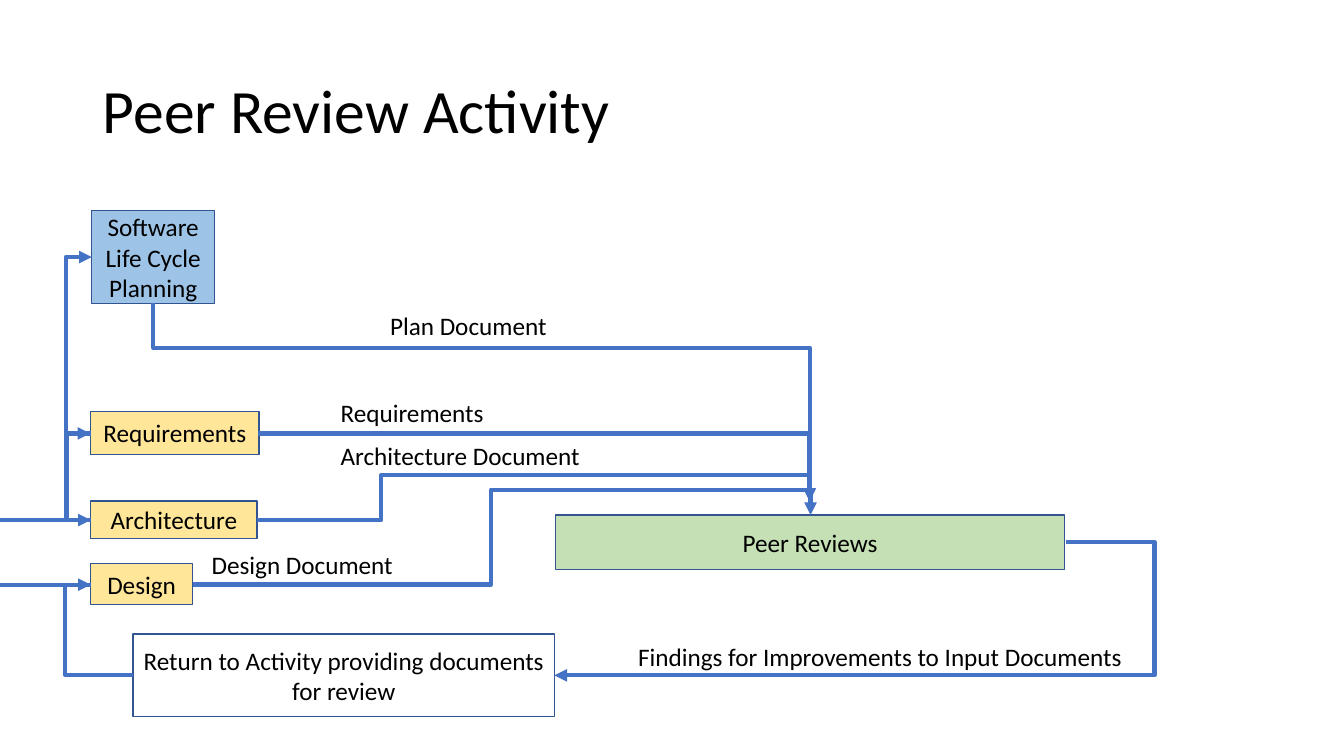
from dataclasses import dataclass

from lxml.etree import SubElement
from pptx import Presentation
from pptx.dml.color import RGBColor
from pptx.enum.shapes import MSO_CONNECTOR, MSO_SHAPE
from pptx.enum.text import MSO_ANCHOR, MSO_AUTO_SIZE, PP_ALIGN
from pptx.oxml.ns import qn
from pptx.util import Inches, Pt


@dataclass(frozen=True)
class Theme:
    font: str = "Calibri"
    title_size: int = 44
    body_size: int = 18
    text: str = "000000"
    outline: str = "325491"
    arrow: str = "4472C4"
    plan: str = "9DC3E6"
    source: str = "FFE699"
    review: str = "C5E0B4"


theme = Theme()


def write_text(shape, text, size, align, frame_format):
    frame = shape.text_frame
    for name, value in frame_format.items():
        setattr(frame, name, value)
    para = frame.paragraphs[0]
    para.alignment = align
    span = para.add_run()
    span.text = text
    font_format = {"name": theme.font, "size": Pt(size)}
    for name, value in font_format.items():
        setattr(span.font, name, value)
    span.font.color.rgb = RGBColor.from_string(theme.text)
    return para


def add_line(kind, start, end, arrow=True):
    points = [Inches(value) for value in (*start, *end)]
    line = page.shapes.add_connector(kind, *points)
    line.line.color.rgb = RGBColor.from_string(theme.arrow)
    line.line.width = Pt(3)
    if arrow:
        SubElement(line.line._get_or_add_ln(), qn("a:tailEnd"), type="triangle")
    SubElement(line._element.spPr, qn("a:effectLst"))
    return line


deck = Presentation()
deck.slide_width, deck.slide_height = Inches(13.33), Inches(7.5)
page = deck.slides.add_slide(deck.slide_layouts[5])

# Title
title = page.shapes.title
title_place = {"left": 0.92, "top": 0.4, "width": 11.5, "height": 1.45}
for name, value in title_place.items():
    setattr(title, name, Inches(value))
title_para = write_text(title, "Peer Review Activity", theme.title_size, PP_ALIGN.LEFT,
                        {"vertical_anchor": MSO_ANCHOR.MIDDLE, "word_wrap": True})
title_para.line_spacing = 0.9

# Activity boxes: text, left, top, width, height, fill
activities = {
    "planning": ("Software Life Cycle Planning", 0.91, 2.09, 1.22, 0.92, theme.plan),
    "requirements": ("Requirements", 0.9, 4.08, 1.67, 0.43, theme.source),
    "architecture": ("Architecture", 0.9, 4.97, 1.65, 0.37, theme.source),
    "design": ("Design", 0.9, 5.59, 1.01, 0.41, theme.source),
    "return": ("Return to Activity providing documents for review",
               1.32, 6.29, 4.18, 0.82, None),
    "reviews": ("Peer Reviews", 5.51, 5.11, 5.05, 0.54, theme.review),
}
boxes = {}
for key, (text, *place, fill) in activities.items():
    box = page.shapes.add_shape(MSO_SHAPE.FLOWCHART_PROCESS, *map(Inches, place))
    box.shadow.inherit = False
    if fill:
        box.fill.solid()
        box.fill.fore_color.rgb = RGBColor.from_string(fill)
    else:
        box.fill.background()
    box.line.color.rgb = RGBColor.from_string(theme.outline)
    box.line.width = Pt(1)
    write_text(box, text, theme.body_size, PP_ALIGN.CENTER,
               {"vertical_anchor": MSO_ANCHOR.MIDDLE, "word_wrap": True})
    boxes[key] = box

# Document labels: text, left, top, width
labels = [
    ("Plan Document", 3.77, 3.03, 2.26),
    ("Requirements", 3.28, 3.89, 1.9),
    ("Architecture Document", 3.28, 4.32, 2.6),
    ("Design Document", 2, 5.4, 2.6),
    ("Findings for Improvements to Input Documents", 6.23, 6.31, 5.66),
]
for text, *place in labels:
    label = page.shapes.add_textbox(*map(Inches, place), Inches(0.4))
    write_text(label, text, theme.body_size, PP_ALIGN.LEFT,
               {"word_wrap": True, "auto_size": MSO_AUTO_SIZE.SHAPE_TO_FIT_TEXT})

# Elbow arrows: start box and site, end box and site, start, end,
# rotation, flip, number of the bent preset, bends as shares of the frame
TOP, LEFT, BOTTOM, RIGHT = range(4)
elbows = [
    (("planning", BOTTOM), None, (1.52, 3.01), (8.03, 4.97), 270, "flipH", 3, [0.225]),
    (("requirements", RIGHT), None, (2.56, 4.3), (8.03, 4.97), 0, None, 2, []),
    (("architecture", RIGHT), None, (2.55, 5.16), (8.03, 4.97), 0, "flipV", 4, [0.225, 2.36]),
    (("design", RIGHT), ("reviews", TOP), (1.91, 5.8), (8.04, 5.11), 0, "flipV", 4,
     [0.483, 1.365]),
    (("reviews", RIGHT), ("return", RIGHT), (10.57, 5.38), (5.5, 6.7), 0, "flipH", 3, [-0.174]),
    (("return", LEFT), ("design", LEFT), (1.32, 6.7), (0.9, 5.8), 180, None, 3, [1.6]),
    (("architecture", LEFT), ("requirements", LEFT), (0.9, 5.16), (0.9, 4.3), 180, None, 3, [25]),
    (("requirements", LEFT), ("planning", LEFT), (0.9, 4.3), (0.91, 2.55), 180, "flipH", 3, [-25]),
]
for source, target, start, end, rotation, flip, bent, bends in elbows:
    elbow = add_line(MSO_CONNECTOR.ELBOW, start, end)
    if source:
        elbow.begin_connect(boxes[source[0]], source[1])
    if target:
        elbow.end_connect(boxes[target[0]], target[1])

    # A quarter turn swaps the sides of the frame around its centre
    width, height = (max(abs(b - a), 0.01) for a, b in zip(start, end))
    if rotation == 270:
        width, height = height, width
    frame_place = {"left": (start[0] + end[0] - width) / 2,
                   "top": (start[1] + end[1] - height) / 2,
                   "width": width, "height": height}
    for name, value in frame_place.items():
        setattr(elbow, name, Inches(value))

    frame = elbow._element.spPr.find(qn("a:xfrm"))
    for name in ("flipH", "flipV"):
        frame.set(name, "1" if name == flip else "0")
    frame.set("rot", str(rotation * 60000))
    geometry = elbow._element.spPr.find(qn("a:prstGeom"))
    geometry.set("prst", f"bentConnector{bent}")
    guides = geometry.find(qn("a:avLst"))
    for number, bend in enumerate(bends, 1):
        SubElement(guides, qn("a:gd"), name=f"adj{number}", fmla=f"val {round(bend * 100000)}")

# Lines between the left edge and the boxes
for height, arrow in ((5.8, False), (5.16, True)):
    add_line(MSO_CONNECTOR.STRAIGHT, (0, height), (0.9, height), arrow)

deck.save("out.pptx")
